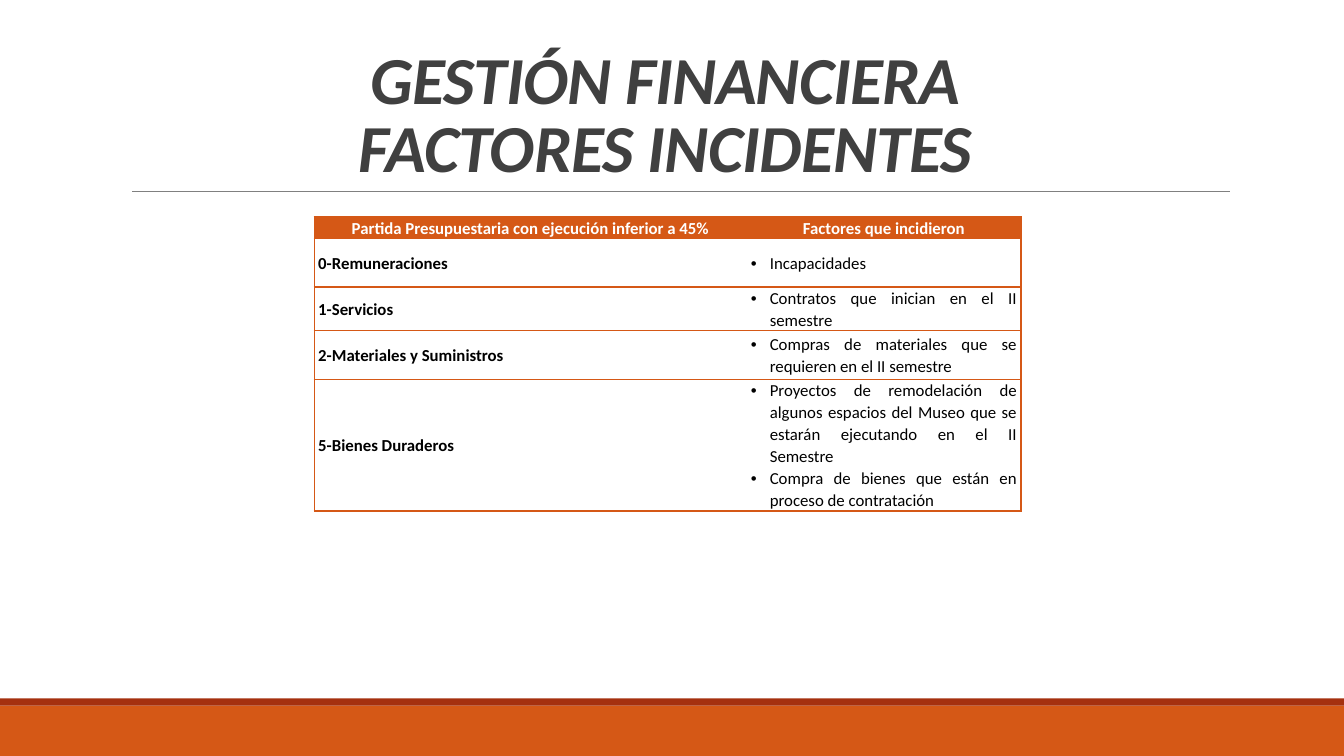
from lxml.etree import SubElement
from pptx import Presentation
from pptx.dml.color import RGBColor
from pptx.enum.shapes import MSO_CONNECTOR, MSO_SHAPE
from pptx.enum.text import MSO_ANCHOR, MSO_AUTO_SIZE, PP_ALIGN
from pptx.oxml.ns import qn
from pptx.util import Cm, Pt

FONT = "Calibri"
ORANGE, RED, GRAY, DARK = "D55816", "A5300F", "808080", "404040"
WHITE, BLACK = "FFFFFF", "000000"

TITLE = "GESTIÓN FINANCIERA\vFACTORES INCIDENTES"
HEADERS = ["Partida Presupuestaria con ejecución inferior a 45%", "Factores que incidieron"]
ITEMS = [
    ("0-Remuneraciones", ["Incapacidades"]),
    ("1-Servicios", ["Contratos que inician en el II semestre"]),
    ("2-Materiales y Suministros", ["Compras de materiales que se requieren en el II semestre"]),
    ("5-Bienes Duraderos", [
        "Proyectos de remodelación de algunos espacios del Museo que se estarán "
        "ejecutando en el II Semestre",
        "Compra de bienes que están en proceso de contratación",
    ]),
]
COLUMN_WIDTHS = [10.9, 6.91]
ROW_HEIGHTS = [0.55, 1.22, 1.1, 1.22, 3.32]
FOOTER_BANDS = [(17.78, 1.27, ORANGE), (17.6, 0.18, RED)]  # top, height, colour


def color(value):
    return RGBColor.from_string(value)


def style_runs(paragraph, size, value, bold, italic=False):
    for run in paragraph.runs:
        run.font.name = FONT
        run.font.size = Pt(size)
        run.font.bold = bold
        run.font.italic = italic
        run.font.color.rgb = color(value)


def add_bullet(paragraph):
    properties = paragraph._p.get_or_add_pPr()
    properties.set("marL", str(Cm(0.48)))
    properties.set("indent", str(-Cm(0.48)))
    SubElement(properties, qn("a:buFont"), typeface="Arial")
    SubElement(properties, qn("a:buChar"), char="•")


def set_borders(cell, is_first_column):
    """Draw every side of the cell except the one between the two columns."""
    properties = cell._tc.get_or_add_tcPr()
    inner_side = "R" if is_first_column else "L"
    for side in "LRTB":
        line = SubElement(properties, qn(f"a:ln{side}"), w=str(Pt(1)))
        if side == inner_side:
            SubElement(line, qn("a:noFill"))
        else:
            fill = SubElement(line, qn("a:solidFill"))
            SubElement(fill, qn("a:srgbClr"), val=ORANGE)


def fill_cell(cell, lines, is_header, is_first_column):
    set_borders(cell, is_first_column)
    if is_header:
        cell.fill.solid()
        cell.fill.fore_color.rgb = color(ORANGE)
    else:
        cell.fill.background()
    cell.vertical_anchor = MSO_ANCHOR.MIDDLE
    cell.margin_left = cell.margin_right = Cm(0.1)
    cell.margin_top = cell.margin_bottom = 0
    cell.text_frame.text = "\n".join(lines)
    is_factor = not is_header and not is_first_column
    for paragraph in cell.text_frame.paragraphs:
        paragraph.line_spacing = 1.07
        if is_header:
            paragraph.alignment = PP_ALIGN.CENTER
        elif is_factor:
            paragraph.alignment = PP_ALIGN.JUSTIFY
            add_bullet(paragraph)
        style_runs(paragraph, 12, WHITE if is_header else BLACK, not is_factor)


def add_footer(slide, width):
    for top, height, value in FOOTER_BANDS:
        band = slide.shapes.add_shape(MSO_SHAPE.RECTANGLE, 0, Cm(top), width, Cm(height))
        band.shadow.inherit = False
        band.fill.solid()
        band.fill.fore_color.rgb = color(value)
        band.line.fill.background()


def add_title(slide):
    rule = slide.shapes.add_connector(MSO_CONNECTOR.STRAIGHT, Cm(3.33), Cm(4.82), Cm(31), Cm(4.82))
    rule.line.color.rgb = color(GRAY)
    rule.line.width = Pt(0.5)
    SubElement(rule._element.spPr, qn("a:effectLst"))

    title = slide.shapes.title
    title.left, title.top, title.width, title.height = Cm(2.8), Cm(0.79), Cm(27.94), Cm(4.04)
    frame = title.text_frame
    frame.text = TITLE
    frame.word_wrap = True
    frame.auto_size = MSO_AUTO_SIZE.NONE
    frame.vertical_anchor = MSO_ANCHOR.BOTTOM
    paragraph = frame.paragraphs[0]
    paragraph.alignment = PP_ALIGN.CENTER
    paragraph.line_spacing = 0.85
    style_runs(paragraph, 48, DARK, True, True)
    for run in paragraph.runs:
        run._r.get_or_add_rPr().set("spc", "-50")


def add_factor_table(slide):
    rows = [[[header] for header in HEADERS]] + [[[name], factors] for name, factors in ITEMS]
    table = slide.shapes.add_table(
        len(rows), len(HEADERS), Cm(7.92), Cm(5.46),
        Cm(sum(COLUMN_WIDTHS)), Cm(sum(ROW_HEIGHTS))).table
    table.horz_banding = False
    for column, width in zip(table.columns, COLUMN_WIDTHS):
        column.width = Cm(width)
    for row, height in zip(table.rows, ROW_HEIGHTS):
        row.height = Cm(height)
    for row_index, row in enumerate(rows):
        for column_index, lines in enumerate(row):
            fill_cell(table.cell(row_index, column_index), lines, row_index == 0, column_index == 0)


def main():
    presentation = Presentation()
    presentation.slide_width, presentation.slide_height = Cm(33.87), Cm(19.05)
    slide = presentation.slides.add_slide(presentation.slide_layouts[5])
    add_footer(slide, presentation.slide_width)
    add_title(slide)
    add_factor_table(slide)
    presentation.save("out.pptx")


if __name__ == "__main__":
    main()
